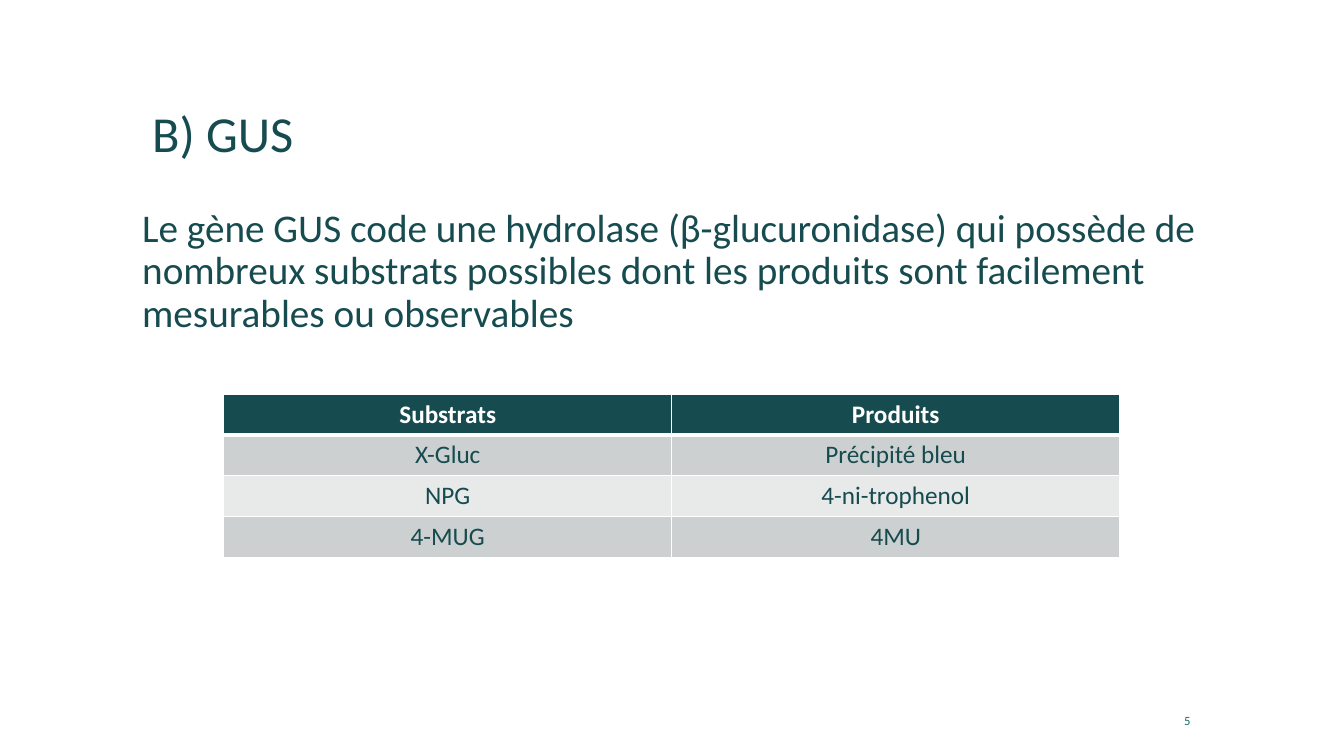
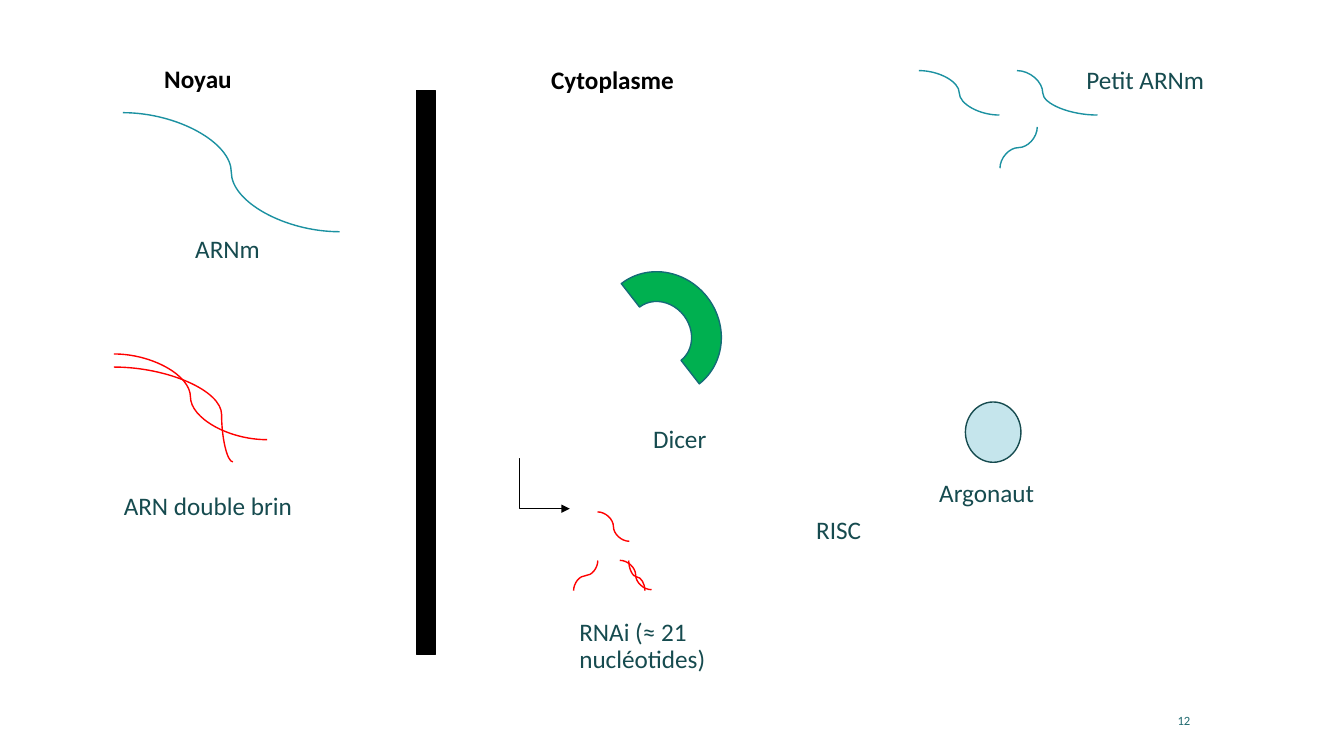
from dataclasses import dataclass

from lxml.etree import SubElement
from pptx import Presentation
from pptx.dml.color import RGBColor
from pptx.enum.shapes import MSO_CONNECTOR, MSO_SHAPE
from pptx.enum.text import MSO_ANCHOR, MSO_AUTO_SIZE, PP_ALIGN
from pptx.oxml.ns import qn
from pptx.util import Cm, Pt

# Shared look
FONT = "Calibri"
DARK, TEAL, NUMBER = "164B4F", "1B91A1", "1F696F"
RED, BLACK, WHITE = "FF0000", "000000", "FFFFFF"
BAND_DARK, BAND_LIGHT = "CCD0D0", "E8E9E9"
FRAME_FORMAT = {"word_wrap": True, "auto_size": MSO_AUTO_SIZE.NONE}
PARAGRAPH_FORMAT = {"line_spacing": 0.9, "space_before": Pt(0), "alignment": PP_ALIGN.LEFT}


@dataclass
class Area:
    left: float
    top: float
    width: float
    height: float

    def lengths(self) -> list:
        return [Cm(side) for side in (self.left, self.top, self.width, self.height)]


@dataclass
class Label:
    text: str
    area: Area
    colour: str = DARK
    bold: bool = False


@dataclass
class Strand:
    area: Area
    colour: str
    bend: float = 0.5
    rotation: int = 0
    flipped: bool = False
    kind: MSO_CONNECTOR = MSO_CONNECTOR.CURVE
    arrow: bool = False


@dataclass
class Figure:
    kind: MSO_SHAPE
    area: Area
    fill: str
    line: str
    rotation: float = 0


TITLE_AREA = Area(3.58, 1.07, 26.67, 3.18)
BODY_AREA = Area(3.33, 5.13, 29.79, 3.48)
TABLE_AREA = Area(5.64, 9.93, 22.58, 4.12)
NUMBER_AREA = Area(22.35, 17.65, 7.9, 1.02)

SUBSTRATES = [
    ("Substrats", "Produits"),
    ("X-Gluc", "Précipité bleu"),
    ("NPG", "4-ni-trophenol"),
    ("4-MUG", "4MU"),
]

FIGURES = [
    Figure(MSO_SHAPE.OVAL, Area(24.33, 10.13, 1.4, 1.52), "C5E5EC", DARK),
    Figure(MSO_SHAPE.MATH_MINUS, Area(1.07, 8.38, 19.33, 2.01), BLACK, BLACK, 90),
    Figure(MSO_SHAPE.BLOCK_ARC, Area(15.04, 6.91, 3.2, 3), "00B050", "146B77", 52.1),
]

STRANDS = [
    # Double-stranded RNA
    Strand(Area(2.87, 8.92, 3.86, 2.16), RED),
    Strand(Area(2.87, 9.25, 3, 2.39), RED, bend=0.905),
    # Arrow to the interfering RNA
    Strand(Area(13.08, 11.56, 1.28, 1.26), BLACK, bend=0.005,
           kind=MSO_CONNECTOR.ELBOW, arrow=True),
    # Interfering RNA
    Strand(Area(15.06, 12.9, 0.8, 0.74), RED),
    Strand(Area(14.38, 14.2, 0.76, 0.61), RED, rotation=90),
    Strand(Area(15.62, 14.12, 0.8, 0.74), RED),
    Strand(Area(15.67, 14.3, 0.76, 0.41), RED, bend=0.546, rotation=270, flipped=True),
    # Messenger RNA and its fragments
    Strand(Area(3.1, 2.84, 5.46, 3), TEAL),
    Strand(Area(25.15, 3.25, 1.04, 0.94), TEAL, rotation=90),
    Strand(Area(23.16, 1.78, 2.03, 1.12), TEAL),
    Strand(Area(25.63, 1.78, 2.03, 1.12), TEAL, bend=0.32),
]

LABELS = [
    Label("Noyau", Area(3.89, 1.55, 7.01, 0.94), BLACK, True),
    Label("Cytoplasme", Area(13.64, 1.57, 7.01, 0.94), BLACK, True),
    Label("ARNm", Area(4.67, 5.84, 2.41, 0.94)),
    Label("ARN double brin", Area(2.87, 12.32, 6.45, 0.94)),
    Label("Dicer", Area(16.21, 10.62, 2.01, 0.94)),
    Label("RNAi (≈ 21 nucléotides)", Area(14.35, 15.49, 4.45, 1.65)),
    Label("Argonaut", Area(23.42, 11.99, 3.2, 0.94)),
    Label("RISC", Area(20.32, 12.93, 2.06, 0.94)),
    Label("Petit ARNm", Area(27.13, 1.57, 3.84, 0.94)),
]


def rgb(colour: str) -> RGBColor:
    return RGBColor.from_string(colour)


def apply(target, values: dict) -> None:
    for name, value in values.items():
        setattr(target, name, value)


def write(frame, text: str, size: float, colour: str = DARK, bold: bool = False,
          anchor=MSO_ANCHOR.TOP, **paragraph_format):
    """Fill a text frame with one formatted paragraph."""
    apply(frame, FRAME_FORMAT | {"vertical_anchor": anchor})
    paragraph = frame.paragraphs[0]
    apply(paragraph, PARAGRAPH_FORMAT | paragraph_format)
    span = paragraph.add_run()
    span.text = text
    apply(span.font, {"name": FONT, "size": Pt(size), "bold": bold})
    span.font.color.rgb = rgb(colour)
    return paragraph


def place(box, area: Area) -> None:
    apply(box, dict(zip(("left", "top", "width", "height"), area.lengths())))


def add_label(page, label: Label, size: float = 18, **text_format) -> None:
    box = page.shapes.add_textbox(*label.area.lengths())
    write(box.text_frame, label.text, size, label.colour, label.bold, **text_format)


def add_number(page, number: int) -> None:
    add_label(page, Label(str(number), NUMBER_AREA, NUMBER), 9,
              anchor=MSO_ANCHOR.MIDDLE, alignment=PP_ALIGN.RIGHT, line_spacing=1.0)


def add_figure(page, figure: Figure) -> None:
    shape = page.shapes.add_shape(figure.kind, *figure.area.lengths())
    shape.shadow.inherit = False
    shape.rotation = figure.rotation
    shape.fill.solid()
    shape.fill.fore_color.rgb = rgb(figure.fill)
    shape.line.color.rgb = rgb(figure.line)
    shape.line.width = Pt(1)


def add_strand(page, strand: Strand) -> None:
    left, top, width, height = strand.area.lengths()
    start, end = left, left + width
    if strand.flipped:
        start, end = end, start
    connector = page.shapes.add_connector(strand.kind, start, top, end, top + height)
    connector.line.color.rgb = rgb(strand.colour)
    connector.line.width = Pt(1)
    # Rotation, bend, arrowhead and no shadow
    properties = connector._element.spPr
    if strand.rotation:
        properties.find(qn("a:xfrm")).set("rot", str(strand.rotation * 60000))
    guides = properties.find(qn("a:prstGeom")).find(qn("a:avLst"))
    SubElement(guides, qn("a:gd"), name="adj1", fmla=f"val {round(strand.bend * 100000)}")
    if strand.arrow:
        SubElement(properties.find(qn("a:ln")), qn("a:tailEnd"), type="triangle")
    SubElement(properties, qn("a:effectLst"))


def add_borders(cell, bottom: float) -> None:
    properties = cell._tc.get_or_add_tcPr()
    for side, width in {"lnL": 1, "lnR": 1, "lnT": 1, "lnB": bottom}.items():
        line = SubElement(properties, qn(f"a:{side}"), w=str(Pt(width)))
        SubElement(SubElement(line, qn("a:solidFill")), qn("a:srgbClr"), val=WHITE)


def add_substrate_table(page) -> None:
    table = page.shapes.add_table(len(SUBSTRATES), 2, *TABLE_AREA.lengths()).table
    for index, values in enumerate(SUBSTRATES):
        header = index == 0
        band = DARK if header else BAND_DARK if index % 2 else BAND_LIGHT
        for cell, text in zip(table.rows[index].cells, values):
            add_borders(cell, 3 if header else 1)
            cell.fill.solid()
            cell.fill.fore_color.rgb = rgb(band)
            paragraph = cell.text_frame.paragraphs[0]
            paragraph.alignment = PP_ALIGN.CENTER
            span = paragraph.add_run()
            span.text = text
            apply(span.font, {"name": FONT, "size": Pt(18), "bold": header})
            span.font.color.rgb = rgb(WHITE if header else DARK)


def build_gus(deck) -> None:
    page = deck.slides.add_slide(deck.slide_layouts[1])
    title, body = page.placeholders
    place(title, TITLE_AREA)
    write(title.text_frame, "B) GUS", 36, anchor=MSO_ANCHOR.BOTTOM)
    place(body, BODY_AREA)
    paragraph = write(
        body.text_frame,
        "Le gène GUS code une hydrolase (β-glucuronidase) qui possède de nombreux "
        "substrats possibles dont les produits sont facilement mesurables ou observables",
        28,
    )
    # Plain paragraph without bullet
    properties = paragraph._p.get_or_add_pPr()
    apply_indent = {"marL": "0", "indent": "0"}
    for name, value in apply_indent.items():
        properties.set(name, value)
    SubElement(properties, qn("a:buNone"))
    add_substrate_table(page)
    add_number(page, 5)


def build_interference(deck) -> None:
    page = deck.slides.add_slide(deck.slide_layouts[6])
    for figure in FIGURES:
        add_figure(page, figure)
    for strand in STRANDS:
        add_strand(page, strand)
    for label in LABELS:
        add_label(page, label)
    add_number(page, 12)


def main() -> None:
    deck = Presentation()
    apply(deck, {"slide_width": Cm(33.87), "slide_height": Cm(19.05)})
    build_gus(deck)
    build_interference(deck)
    deck.save("out.pptx")


if __name__ == "__main__":
    main()
